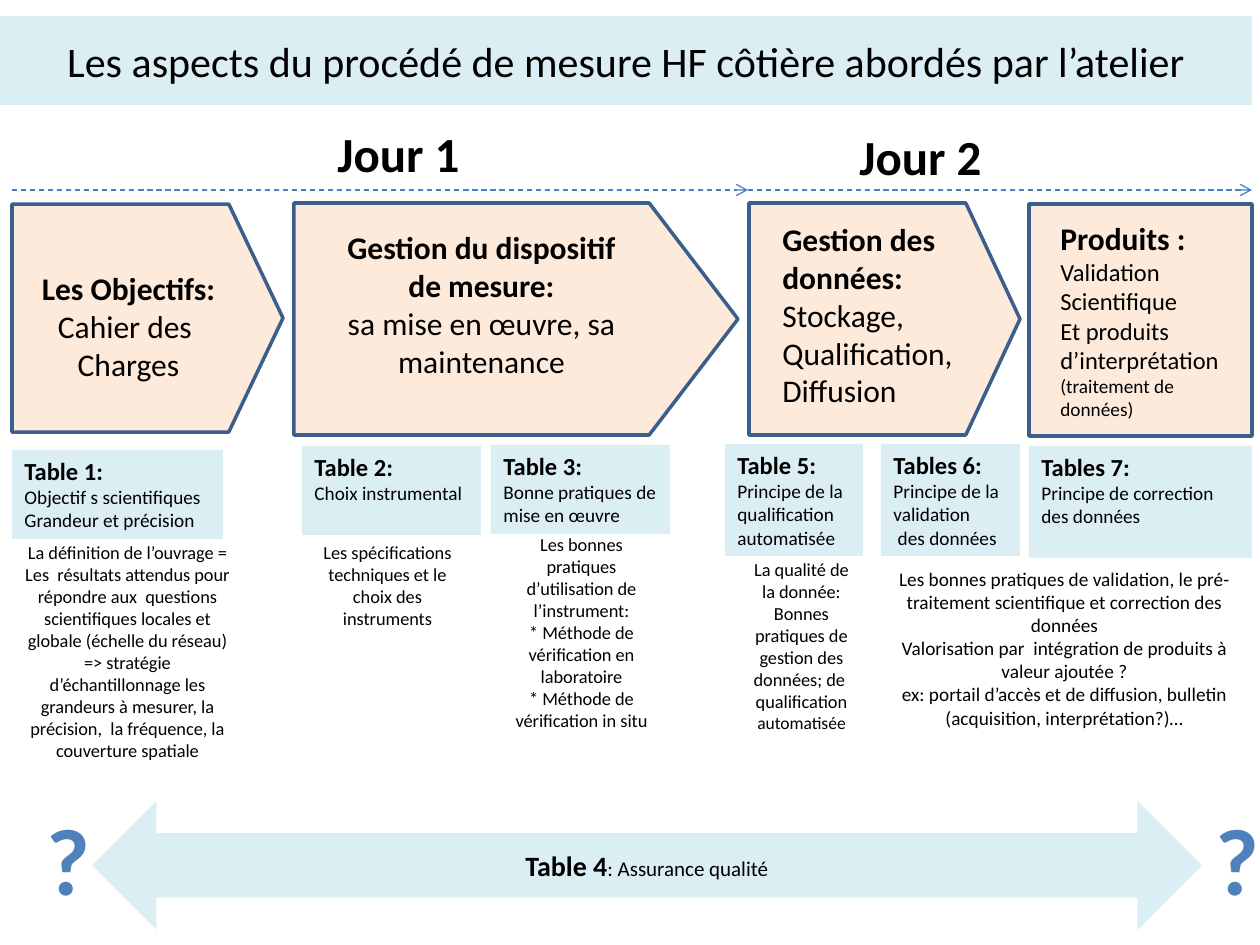
import pptx
import pptx.util
import pptx.dml.color
import pptx.oxml
import pptx.oxml.ns
from pptx.enum.dml import MSO_LINE
from pptx.enum.shapes import MSO_CONNECTOR, MSO_SHAPE
from pptx.enum.text import MSO_ANCHOR, PP_ALIGN

TITLE = "Les aspects du procédé de mesure HF côtière abordés par l’atelier"
DAYS = [("Jour 1", (325, 117, 149, 72), 12, 748), ("Jour 2", (847, 120, 149, 72), 748, 1252)]
STAGES = [
    ((12, 204, 271, 228), (25, 263, 207, 127), "center",
     [[("Les Objectifs:", "stage", True)], [("Cahier des ", "stage")], [("Charges", "stage")]]),
    ((294, 203, 444, 232), (320, 222, 323, 165), "center",
     [[("Gestion du dispositif de mesure:", "stage", True)],
      [("sa mise en œuvre, sa maintenance", "stage")]]),
    ((749, 203, 271, 232), (770, 214, 198, 203), "left",
     [[("Gestion des données:", "stage", True)],
      [("Stockage, Qualification, Diffusion", "stage")]]),
    ((1029, 204, 223, 232), (1048, 213, 199, 217), "left",
     [[("Produits : ", "stage", True), ("Validation Scientifique", "card")],
      [("Et produits d’interprétation", "card")], [("(traitement de données)", "detail")]]),
]
CARDS = [
    ((12, 450, 211, 89), "Table 1:", ["Objectif s scientifiques", "Grandeur et précision"]),
    ((302, 446, 179, 89), "Table 2:", ["Choix instrumental"]),
    ((491, 445, 179, 89), "Table 3:", ["Bonne pratiques de", "mise en œuvre"]),
    ((725, 444, 138, 112), "Table 5:", ["Principe de la", "qualification", "automatisée"]),
    ((881, 444, 139, 112), "Tables 6:", ["Principe de la validation", " des données"]),
    ((1029, 446, 223, 112), "Tables 7:", ["Principe de correction", "des données"]),
]
NOTES = [
    ((12, 535, 231, 258), "note",
     [[("La définition de l’ouvrage = Les  résultats attendus pour répondre aux  questions "
        "scientifiques locales et globale (échelle du réseau)",)],
      [("=> stratégie d’échantillonnage les grandeurs à mesurer, la précision,  la fréquence, "
        "la couverture spatiale",)]]),
    ((302, 535, 171, 102), "note",
     [[("Les spécifications techniques et le choix des instruments",)]]),
    ((491, 527, 181, 213), "note",
     [[("Les bonnes pratiques d’utilisation de l’instrument:",)],
      [("* Méthode de vérification en laboratoire",)],
      [("* Méthode de vérification in situ",)]]),
    ((737, 552, 129, 190), "note",
     [[("La qualité de la donnée:",)],
      [("Bonnes pratiques de gestion des données; de  qualification ",),
       ("automatisée", "small")]]),
    ((882, 561, 365, 176), "detail",
     [[("Les bonnes pratiques de validation, le pré-traitement scientifique et correction "
        "des données",)],
      [("Valorisation par  intégration de produits à valeur ajoutée ?",)],
      [("ex: portail d’accès et de diffusion, bulletin (acquisition, interprétation?)…",)]]),
]
QUALITY = [[("Table 4", "quality", True), (": Assurance qualité", "label")]]

THEME = {
    "font": "Calibri",
    "color": {"text": "000000", "pale": "DBEEF4", "stage": "FDEADA",
              "outline": "3A5F8C", "line": "4B7EBC", "mark": "4F81BD"},
    "size": {"title": 24, "day": 28, "stage": 18, "card": 14, "detail": 11, "note": 10.5,
             "small": 10, "quality": 16, "label": 12, "mark": 54},
}
ALIGN = {"left": PP_ALIGN.LEFT, "center": PP_ALIGN.CENTER}
PX = 914400 / 126


def px(*values):
    return [round(v * PX) for v in values]


def color(name):
    return pptx.dml.color.RGBColor.from_string(THEME["color"][name])


def paint(sp, fill, line=None):
    sp.fill.solid()
    sp.fill.fore_color.rgb = color(fill)
    if line:
        sp.line.color.rgb = color(line)
        sp.line.width = pptx.util.Pt(2)
    else:
        sp.line.fill.background()


def write(tf, paragraphs, size="note", bold=False, fill="text", align="left",
          anchor=MSO_ANCHOR.TOP, wrap=True):
    tf.word_wrap = wrap
    tf.vertical_anchor = anchor
    for i, runs in enumerate(paragraphs):
        p = tf.add_paragraph() if i else tf.paragraphs[0]
        p.alignment = ALIGN[align]
        for text, *style in runs:
            r = p.add_run()
            r.text = text
            r.font.name = THEME["font"]
            r.font.size = pptx.util.Pt(THEME["size"][style[0] if style else size])
            r.font.bold = style[1] if len(style) > 1 else bold
            r.font.color.rgb = color(fill)


def add_text(s, box, paragraphs, back=None, **style):
    sp = s.shapes.add_textbox(*px(*box))
    if back:
        paint(sp, back)
    write(sp.text_frame, paragraphs, **style)


def add_shape(s, kind, box, fill, line=None):
    sp = s.shapes.add_shape(kind, *px(*box))
    sp.shadow.inherit = False
    paint(sp, fill, line)
    return sp


def add_pointer(s, box):
    x, y, w, h = box
    upright = (x + (w - h) / 2, y + (h - w) / 2, h, w)
    sp = add_shape(s, MSO_SHAPE.FLOWCHART_OFFPAGE_CONNECTOR, upright, "stage", "outline")
    sp.rotation = 270


def add_arrow(s, x1, x2, y):
    cn = s.shapes.add_connector(MSO_CONNECTOR.STRAIGHT, *px(x1, y, x2, y))
    cn.line.color.rgb = color("line")
    cn.line.width = pptx.util.Pt(0.75)
    cn.line.dash_style = MSO_LINE.DASH
    tail = pptx.oxml.parse_xml(f'<a:tailEnd {pptx.oxml.ns.nsdecls("a")} type="arrow"/>')
    cn.line._get_or_add_ln().append(tail)
    cn._element.spPr.append(pptx.oxml.parse_xml(f'<a:effectLst {pptx.oxml.ns.nsdecls("a")}/>'))


def main():
    prs = pptx.Presentation()
    prs.slide_width, prs.slide_height = px(1260, 945)
    s = prs.slides.add_slide(prs.slide_layouts[5])

    title = s.shapes.title
    title.left, title.top, title.width, title.height = px(0, 16, 1252, 89)
    paint(title, "pale")
    write(title.text_frame, [[(TITLE,)]], size="title", align="center", anchor=MSO_ANCHOR.MIDDLE)

    for box, size, paragraphs in NOTES:
        add_text(s, box, paragraphs, size=size, align="center")

    for box, text_box, align, paragraphs in STAGES:
        if box == STAGES[-1][0]:
            add_shape(s, MSO_SHAPE.FLOWCHART_PROCESS, box, "stage", "outline")
        else:
            add_pointer(s, box)
        add_text(s, text_box, paragraphs, back="stage", align=align)

    for box, heading, lines in CARDS:
        paragraphs = [[(heading, "card", True)]] + [[(line,)] for line in lines]
        add_text(s, box, paragraphs, back="pale", size="detail")

    band = add_shape(s, MSO_SHAPE.LEFT_RIGHT_ARROW, (92, 801, 1110, 129), "pale")
    write(band.text_frame, QUALITY, align="center", anchor=MSO_ANCHOR.MIDDLE)
    for x in (34, 1203):
        add_text(s, (x, 795, 43, 127), [[("?",)]], size="mark", bold=True, fill="mark",
                 align="center")

    for name, box, start, end in DAYS:
        add_text(s, box, [[(name,)]], size="day", bold=True, wrap=False)
        add_arrow(s, start, end, 190)

    prs.save("out.pptx")


if __name__ == "__main__":
    main()
